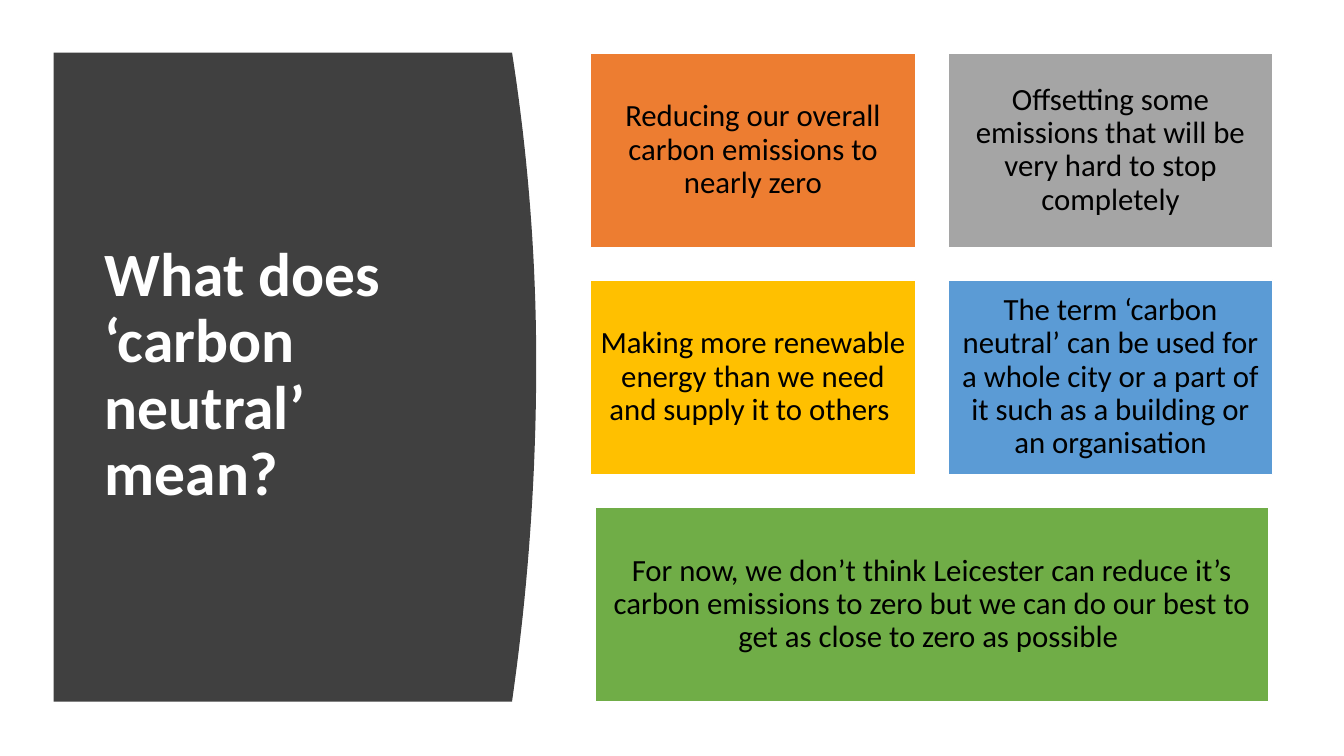
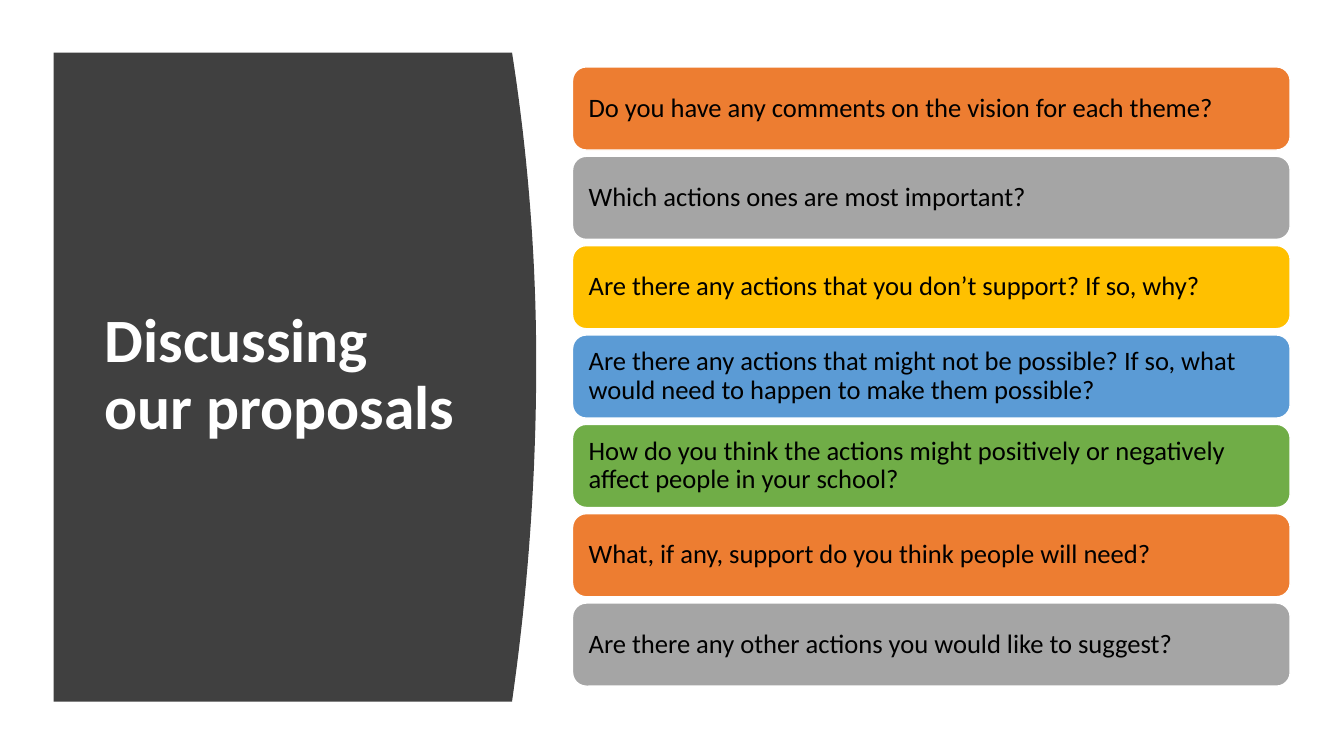
import pptx
import pptx.dml.color
import pptx.enum.shapes
import pptx.enum.text
import pptx.util

SHAPE = pptx.enum.shapes.MSO_SHAPE
ALIGN = pptx.enum.text.PP_ALIGN
ANCHOR = pptx.enum.text.MSO_ANCHOR

ACCENTS = ["ED7D31", "A5A5A5", "FFC000", "5B9BD5", "70AD47"]
DARK, WHITE, BLACK = "404040", "FFFFFF", "000000"


def rgb(value):
    return pptx.dml.color.RGBColor.from_string(value)


def apply(target, values):
    for name, value in values.items():
        setattr(target, name, value)


class Deck:
    """Holds the style and the current slide; lengths are percent of the slide."""

    font = "Calibri"
    title_font = {"size": pptx.util.Pt(44), "bold": True}
    card_font = {"size": pptx.util.Pt(22)}
    item_font = {"size": pptx.util.Pt(19)}

    def __init__(self):
        self.prs = pptx.Presentation()
        self.prs.slide_width = pptx.util.Inches(13.333)
        self.prs.slide_height = pptx.util.Inches(7.5)
        self.s = None

    def x(self, share):
        return round(self.prs.slide_width * share / 100)

    def y(self, share):
        return round(self.prs.slide_height * share / 100)

    def box(self, left, top, width, height):
        return self.x(left), self.y(top), self.x(width), self.y(height)

    def slide(self, title):
        self.s = self.prs.slides.add_slide(self.prs.slide_layouts[6])
        self.panel()
        self.title(title)

    # Dark panel whose right edge bulges as two half parabolas
    def panel(self, left=4, top=6.95, edge=38.1, bulge=39.9, peak=48, bottom=92.8, steps=20):
        points = []
        for i in range(2 * steps + 1):
            t = i / steps - 1
            reach = peak - top if t < 0 else bottom - peak
            points.append((self.x(bulge - (bulge - edge) * t * t), self.y(peak + t * reach)))
        points.append((self.x(left), self.y(bottom)))
        fb = self.s.shapes.build_freeform(self.x(left), self.y(top))
        fb.add_line_segments(points, close=True)
        sp = fb.convert_to_shape()
        sp.shadow.inherit = False
        sp.fill.solid()
        sp.fill.fore_color.rgb = rgb(DARK)
        sp.line.fill.background()

    def title(self, text):
        sp = self.s.shapes.add_textbox(*self.box(7.05, 14.8, 28.05, 69.9))
        self.text(sp, text, self.title_font, WHITE, ALIGN.LEFT, 0.1, 0.05)

    def block(self, kind, area, fill, text, font, align, inset):
        sp = self.s.shapes.add_shape(kind, *self.box(*area))
        sp.shadow.inherit = False
        sp.fill.solid()
        sp.fill.fore_color.rgb = rgb(fill)
        sp.line.color.rgb = rgb(WHITE)
        sp.line.width = pptx.util.Pt(1)
        self.text(sp, text, font, BLACK, align, inset, inset)

    def card(self, area, fill, text):
        self.block(SHAPE.RECTANGLE, area, fill, text, self.card_font, ALIGN.CENTER, 0.09)

    def item(self, area, fill, text):
        self.block(SHAPE.ROUNDED_RECTANGLE, area, fill, text, self.item_font, ALIGN.LEFT, 0.12)

    def text(self, sp, text, font, color, align, side, end):
        tf = sp.text_frame
        side, end = pptx.util.Inches(side), pptx.util.Inches(end)
        apply(tf, {"word_wrap": True, "vertical_anchor": ANCHOR.MIDDLE,
                   "margin_left": side, "margin_right": side,
                   "margin_top": end, "margin_bottom": end})
        p = tf.paragraphs[0]
        apply(p, {"alignment": align, "line_spacing": 0.9})
        r = p.add_run()
        r.text = text
        apply(r.font, {"name": self.font, **font})
        r.font.color.rgb = rgb(color)


def meaning_slide(deck):
    deck.slide("What does ‘carbon neutral’ mean?")
    texts = [
        "Reducing our overall carbon emissions to nearly zero",
        "Offsetting some emissions that will be very hard to stop completely",
        "Making more renewable energy than we need and supply it to others ",
        "The term ‘carbon neutral’ can be used for a whole city or a part of it "
        "such as a building or an organisation",
        "For now, we don’t think Leicester can reduce it’s carbon emissions to zero "
        "but we can do our best to get as close to zero as possible ",
    ]
    # Two columns of cards; the last card spans both
    left, top, width, height = 43.95, 7, 24.15, 25.75
    col_step, row_step, wide = 26.6, 30.03, 50.1
    for i, (text, fill) in enumerate(zip(texts, ACCENTS)):
        row, col = divmod(i, 2)
        area = (left + col * col_step, top + row * row_step, width, height)
        if i == len(texts) - 1:
            area = (left + (col_step + width - wide) / 2, area[1], wide, height)
        deck.card(area, fill, text)


def discussion_slide(deck):
    deck.slide("Discussing our proposals")
    questions = [
        "Do you have any comments on the vision for each theme?",
        "Which actions ones are most important?",
        "Are there any actions that you don’t support? If so, why?",
        "Are there any actions that might not be possible? If so, what would need "
        "to happen to make them possible?",
        "How do you think the actions might positively or negatively affect people "
        "in your school?",
        "What, if any, support do you think people will need?",
        "Are there any other actions you would like to suggest?",
    ]
    # Equal rows; the colours start again after the fifth
    for i, text in enumerate(questions):
        area = (42.6, 8.85 + i * 11.82, 53.4, 11)
        deck.item(area, ACCENTS[i % len(ACCENTS)], text)


def main():
    deck = Deck()
    meaning_slide(deck)
    discussion_slide(deck)
    deck.prs.save("out.pptx")


if __name__ == "__main__":
    main()
